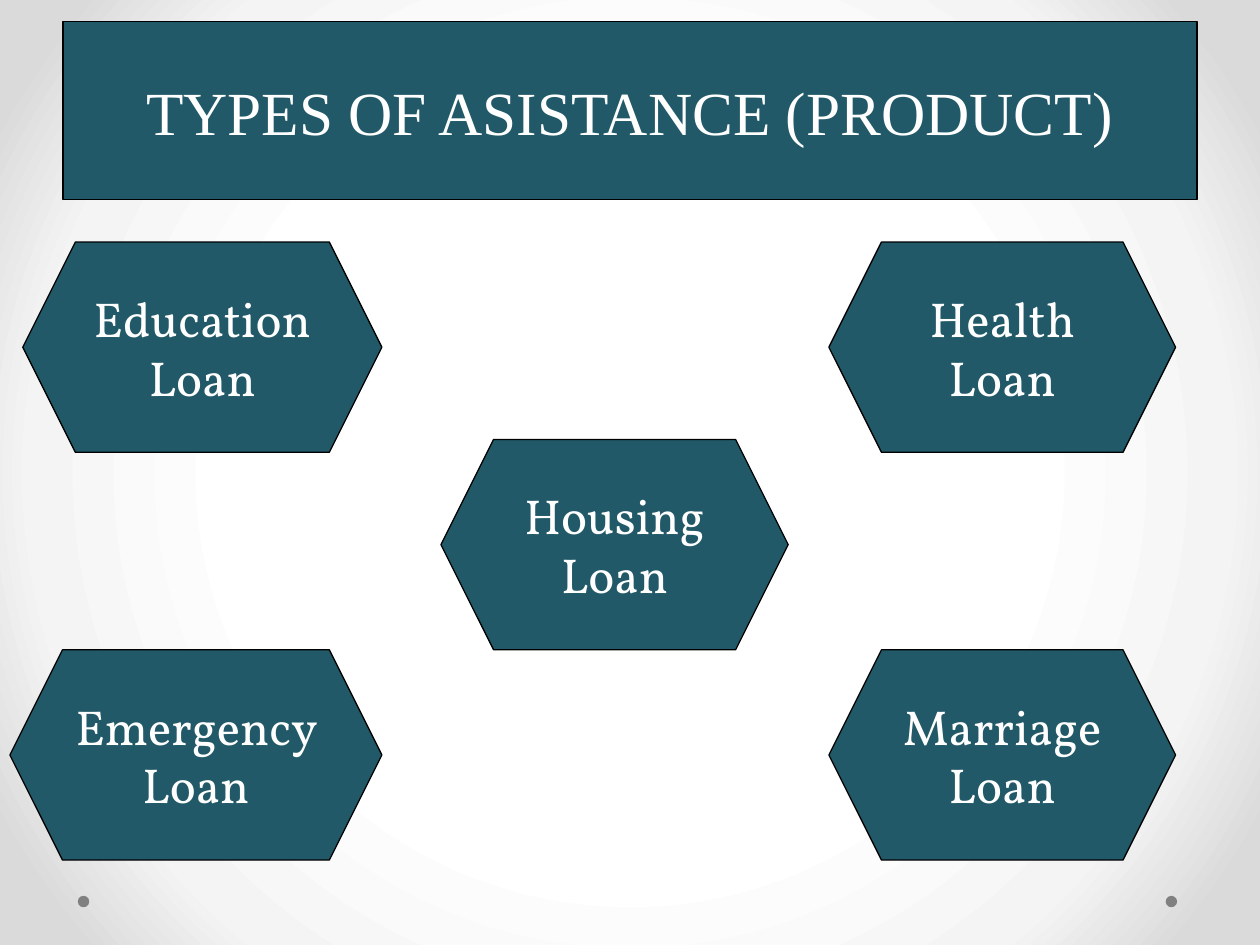
from lxml import etree
from pptx import Presentation
from pptx.dml.color import RGBColor
from pptx.enum import shapes, text
from pptx.oxml import ns
from pptx.util import Cm, Pt

THEME = {
    "fill": "215968", "line": "000000", "ink": "FFFFFF", "dot": "808080",
    "glow": [(50, "FFFFFF"), (76, "F4F4F4"), (92, "DADADA")],
    "head": ("Times New Roman", 35), "body": ("Vollkorn", 28),
}
TITLE = "TYPES OF ASISTANCE (PRODUCT)"
HIGH = 4.24
ROWS = {"top": 4.88, "mid": 8.86, "low": 8.86 + HIGH}
# label, row, left, width
LOANS = [
    ("Emergency Loan", "low", 0.2, 7.5),
    ("Education Loan", "top", 0.46, 7.24),
    ("Health Loan", "top", 16.71, 6.99),
    ("Marriage Loan", "low", 16.71, 6.99),
    ("Housing Loan", "mid", 8.89, 7.0),
]
DOTS = [1.57, 23.5]
KIND = shapes.MSO_SHAPE


def paint(slide):
    """Set a round gradient, light in the middle, as the background."""
    slide.background.fill.gradient()
    grad = slide.background._cSld.find(".//" + ns.qn("a:gradFill"))
    for child in list(grad):
        grad.remove(child)
    stops = etree.SubElement(grad, ns.qn("a:gsLst"))
    for pos, color in THEME["glow"]:
        stop = etree.SubElement(stops, ns.qn("a:gs"), pos=str(pos * 1000))
        etree.SubElement(stop, ns.qn("a:srgbClr"), val=color)
    ring = etree.SubElement(grad, ns.qn("a:path"), path="circle")
    sides = dict.fromkeys("ltrb", "50000")
    etree.SubElement(ring, ns.qn("a:fillToRect"), sides)


def add_form(slide, kind, box, fill):
    form = slide.shapes.add_shape(kind, *map(Cm, box))
    form.shadow.inherit = False
    form.fill.solid()
    form.fill.fore_color.rgb = RGBColor.from_string(fill)
    form.line.fill.background()
    return form


def add_label(slide, kind, box, words, style):
    form = add_form(slide, kind, box, THEME["fill"])
    form.line.color.rgb = RGBColor.from_string(THEME["line"])
    form.line.width = Pt(0.75)
    frame = form.text_frame
    frame.word_wrap = True
    frame.vertical_anchor = text.MSO_ANCHOR.MIDDLE
    para = frame.paragraphs[0]
    para.alignment = text.PP_ALIGN.CENTER
    run = para.add_run()
    run.text = words
    face, size = THEME[style]
    run.font.name = face
    run.font.size = Pt(size)
    run.font.color.rgb = RGBColor.from_string(THEME["ink"])


def main():
    deck = Presentation()
    deck.slide_width, deck.slide_height = Cm(25.4), Cm(19.05)
    slide = deck.slides.add_slide(deck.slide_layouts[6])
    paint(slide)
    for left in DOTS:
        add_form(slide, KIND.OVAL, (left, 18.06, 0.23, 0.23), THEME["dot"])
    add_label(slide, KIND.RECTANGLE, (1.27, 0.43, 22.86, 3.6), TITLE, "head")
    for words, row, left, width in LOANS:
        box = (left, ROWS[row], width, HIGH)
        add_label(slide, KIND.HEXAGON, box, words, "body")
    deck.save("out.pptx")


if __name__ == "__main__":
    main()
